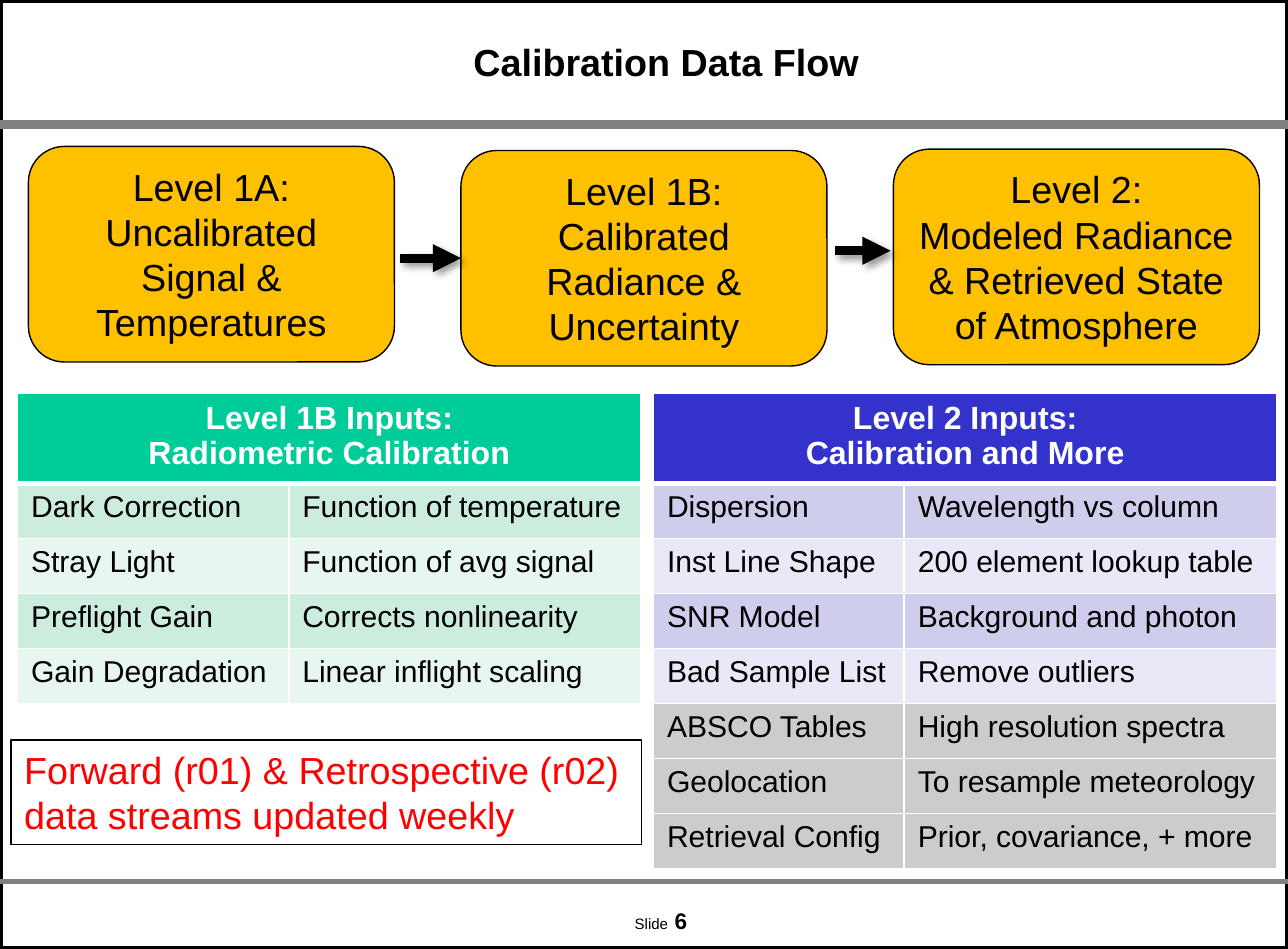
from lxml.etree import SubElement
from pptx import Presentation
from pptx.dml.color import RGBColor
from pptx.enum.shapes import MSO_CONNECTOR, MSO_SHAPE
from pptx.enum.text import MSO_ANCHOR, PP_ALIGN
from pptx.oxml.ns import qn
from pptx.util import Pt

WIDTH, HEIGHT = 684, 504

THEME = {
    "font": "Arial",
    "black": "000000", "white": "FFFFFF", "rule": "808080",
    "stage": "FFC000", "notice": "FF0000",
    "green": "00CC99", "green_bands": ("CCECDE", "E7F6EF"),
    "blue": "3333CC", "blue_bands": ("CECEEC", "E8E8F6"),
    "gray_bands": ("CCCCCC", "CCCCCC"),
    "heading": 20, "table_head": 17, "table_body": 16, "number": 12, "footer": 8,
}

TITLE = "Calibration Data Flow"
NOTICE = "Forward (r01) & Retrospective (r02) data streams updated weekly"
FOOTER = [("Slide", {}), (" ", {"size": THEME["number"]}),
          ("6", {"size": THEME["number"], "bold": True})]

RULES = [(468, 2.5), (66.24, 4.5)]

STAGE_SIZE = (194.4, 114.5)
STAGES = [
    (15.12, 77.76, ["Level 1A:", "Uncalibrated Signal & Temperatures"]),
    (244.8, 79.9, ["Level 1B: Calibrated Radiance & Uncertainty"]),
    (474.5, 79.2, ["Level 2:", "Modeled Radiance & Retrieved State of Atmosphere"]),
]

TABLE_TOP, HEAD_HEIGHT, ROW_HEIGHT = 208.8, 47.5, 29.2
TABLES = [
    {
        "left": 9.36, "columns": (144, 187.2), "fill": "green",
        "head": ["Level 1B Inputs:", "Radiometric Calibration"],
        "groups": [("green_bands", [
            ("Dark Correction", "Function of temperature"),
            ("Stray Light", "Function of avg signal"),
            ("Preflight Gain", "Corrects nonlinearity"),
            ("Gain Degradation", "Linear inflight scaling"),
        ])],
    },
    {
        "left": 347.04, "columns": (133.2, 198), "fill": "blue",
        "head": ["Level 2 Inputs:", "Calibration and More"],
        "groups": [("blue_bands", [
            ("Dispersion", "Wavelength vs column"),
            ("Inst Line Shape", "200 element lookup table"),
            ("SNR Model", "Background and photon"),
            ("Bad Sample List", "Remove outliers"),
        ]), ("gray_bands", [
            ("ABSCO Tables", "High resolution spectra"),
            ("Geolocation", "To resample meteorology"),
            ("Retrieval Config", "Prior, covariance, + more"),
        ])],
    },
]


def rgb(name):
    return RGBColor.from_string(THEME.get(name, name))


def write(frame, paragraphs, size, color="black", bold=False, align=PP_ALIGN.LEFT):
    frame.word_wrap = True
    for index, content in enumerate(paragraphs):
        para = frame.paragraphs[0] if index == 0 else frame.add_paragraph()
        para.alignment = align
        spans = [(content, {})] if isinstance(content, str) else content
        for text, changes in spans:
            span = para.add_run()
            span.text = text
            span.font.name = THEME["font"]
            span.font.size = Pt(changes.get("size", size))
            span.font.bold = changes.get("bold", bold)
            span.font.color.rgb = rgb(color)


def add_box(page, kind, left, top, width, height, fill=None, line_width=0.75):
    box = page.shapes.add_shape(kind, Pt(left), Pt(top), Pt(width), Pt(height))
    box.shadow.inherit = False
    if fill:
        box.fill.solid()
        box.fill.fore_color.rgb = rgb(fill)
    else:
        box.fill.background()
    box.line.color.rgb = rgb("black")
    box.line.width = Pt(line_width)
    box.text_frame.vertical_anchor = MSO_ANCHOR.TOP
    return box


def add_line(page, start, end, color, width):
    line = page.shapes.add_connector(
        MSO_CONNECTOR.STRAIGHT, *(Pt(value) for value in (*start, *end)))
    line.line.color.rgb = rgb(color)
    line.line.width = Pt(width)
    effects = SubElement(line._element.spPr, qn("a:effectLst"))
    return line, effects


def add_arrow(page, left, right, y):
    arrow, effects = add_line(page, (left, y), (right, y), "black", 5)
    SubElement(arrow.line._get_or_add_ln(), qn("a:tailEnd"), type="triangle")
    shadow = SubElement(effects, qn("a:outerShdw"), blurRad=str(Pt(4)),
                        dist=str(Pt(3)), dir=str(45 * 60000), rotWithShape="0")
    color = SubElement(shadow, qn("a:srgbClr"), val=THEME["black"])
    SubElement(color, qn("a:alpha"), val="40000")
    return arrow


def paint_cell(cell, fill, top, bottom):
    properties = cell._tc.get_or_add_tcPr()
    for side, width in (("L", 1), ("R", 1), ("T", top), ("B", bottom)):
        border = SubElement(properties, qn(f"a:ln{side}"), w=str(Pt(width)))
        solid = SubElement(border, qn("a:solidFill"))
        SubElement(solid, qn("a:srgbClr"), val=THEME["white"])
    cell.fill.solid()
    cell.fill.fore_color.rgb = rgb(fill)


def add_inputs(page, left, columns, fill, head, groups):
    rows = [(THEME[bands][index % 2], texts)
            for bands, lines in groups for index, texts in enumerate(lines)]
    table = page.shapes.add_table(
        len(rows) + 1, len(columns), Pt(left), Pt(TABLE_TOP), Pt(sum(columns)),
        Pt(HEAD_HEIGHT + ROW_HEIGHT * len(rows))).table
    for column, width in zip(table.columns, columns):
        column.width = Pt(width)
    for index, row in enumerate(table.rows):
        row.height = Pt(ROW_HEIGHT if index else HEAD_HEIGHT)
    table.cell(0, 0).merge(table.cell(0, 1))
    for cell in table.rows[0].cells:
        paint_cell(cell, fill, 1, 3)
    write(table.cell(0, 0).text_frame, head, THEME["table_head"], color="white",
          bold=True, align=PP_ALIGN.CENTER)
    for number, (band, texts) in enumerate(rows, 1):
        for cell, text in zip(table.rows[number].cells, texts):
            paint_cell(cell, band, 3 if number == 1 else 1, 1)
            write(cell.text_frame, [text], THEME["table_body"])


def main():
    deck = Presentation()
    deck.slide_width, deck.slide_height = Pt(WIDTH), Pt(HEIGHT)
    page = deck.slides.add_slide(deck.slide_layouts[6])
    page.background.fill.solid()
    page.background.fill.fore_color.rgb = rgb("white")

    add_box(page, MSO_SHAPE.RECTANGLE, 0, 0, WIDTH, HEIGHT, line_width=3)
    for y, width in RULES:
        add_line(page, (0, y), (WIDTH, y), "rule", width)

    footer = page.shapes.add_textbox(Pt(321.12), Pt(481.7), Pt(59.76), Pt(14.4)).text_frame
    footer.margin_left = footer.margin_right = footer.margin_top = footer.margin_bottom = 0
    write(footer, [FOOTER], THEME["footer"], align=PP_ALIGN.CENTER)

    title = page.shapes.add_textbox(Pt(131.76), Pt(17.28), Pt(444.24), Pt(31)).text_frame
    title.vertical_anchor = MSO_ANCHOR.MIDDLE
    write(title, [TITLE], THEME["heading"], bold=True, align=PP_ALIGN.CENTER)

    stages = []
    for left, top, lines in STAGES:
        stage = add_box(page, MSO_SHAPE.ROUNDED_RECTANGLE, left, top, *STAGE_SIZE, fill="stage")
        write(stage.text_frame, lines, THEME["heading"], align=PP_ALIGN.CENTER)
        stages.append(stage)

    calibrated_left, calibrated_top, _ = STAGES[1]
    calibration = add_arrow(page, 212.4, calibrated_left, calibrated_top + STAGE_SIZE[1] / 2)
    calibration.end_connect(stages[1], 1)
    add_arrow(page, 443.5, 473, 133.2)

    for inputs in TABLES:
        add_inputs(page, **inputs)

    notice = add_box(page, MSO_SHAPE.RECTANGLE, 5.76, 393.1, 334.8, 55.4)
    write(notice.text_frame, [NOTICE], THEME["heading"], color="notice")

    deck.save("out.pptx")


if __name__ == "__main__":
    main()
